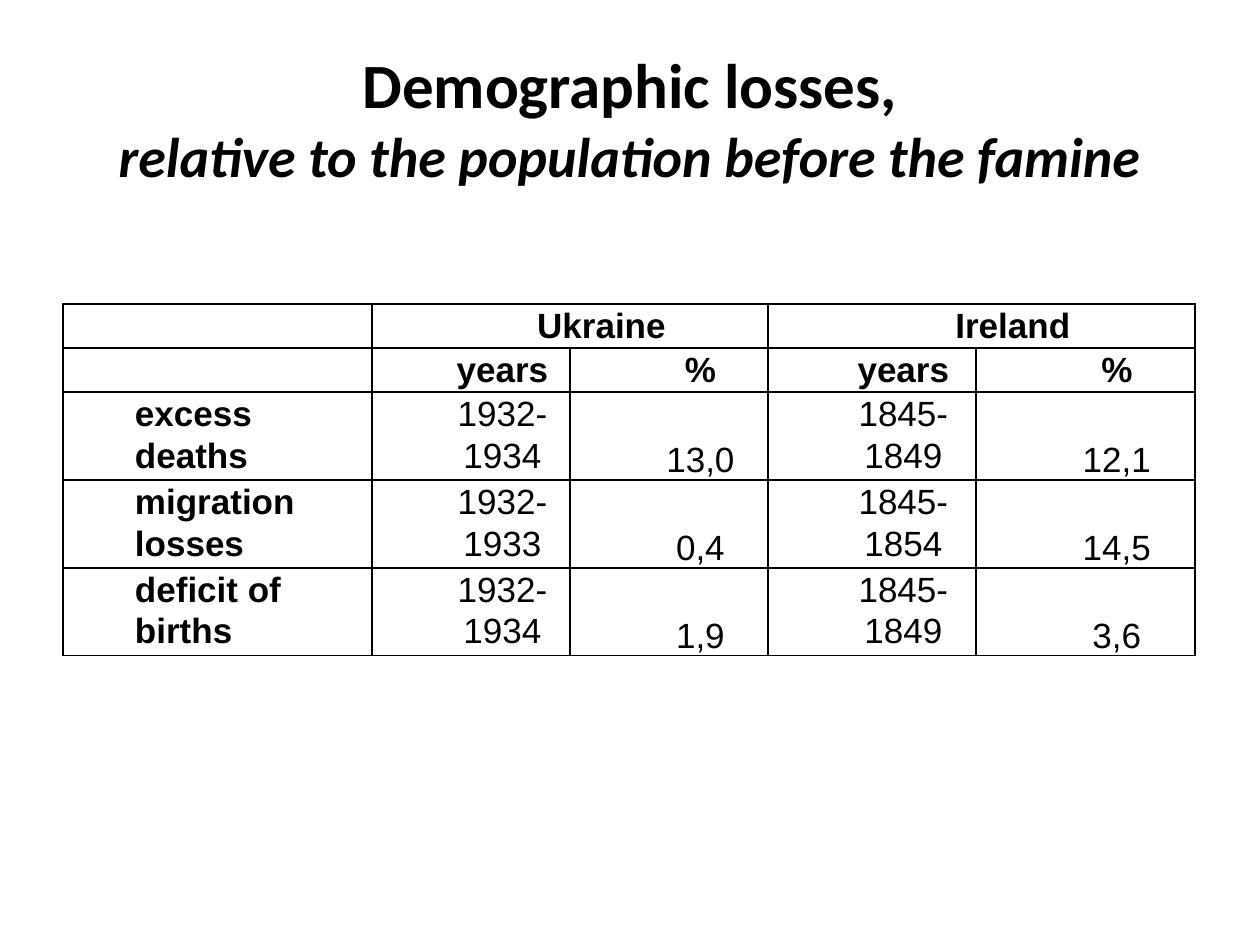
from dataclasses import dataclass

from lxml import etree
from pptx import Presentation
from pptx import util as u
from pptx.dml.color import RGBColor
from pptx.enum import text

PX = 914400 // 126  # EMU in one px


def px(n: int) -> u.Emu:
    return u.Emu(n * PX)


@dataclass(frozen=True)
class Theme:
    ink: str = "000000"
    head: str = "Calibri"
    body: str = "Arial"
    main: int = 36
    sub: int = 32
    cell: int = 20
    rule: int = 1
    lead: float = 1.07


@dataclass(frozen=True)
class Loss:
    name: str
    ua_years: str
    ua_rate: str
    ie_years: str
    ie_rate: str

    def row(self) -> list[str]:
        return [self.name, self.ua_years, self.ua_rate,
                self.ie_years, self.ie_rate]


THEME = Theme()
COLS = [309, 198, 198, 208, 219]
ROWS = [44, 44, 88, 88, 88]
HEADS = [["", "Ukraine", "", "Ireland", ""],
         ["", "years", "%", "years", "%"]]
LOSSES = [
    Loss("excess deaths", "1932-1934", "13,0", "1845-1849", "12,1"),
    Loss("migration losses", "1932-1933", "0,4", "1845-1854", "14,5"),
    Loss("deficit of births", "1932-1934", "1,9", "1845-1849", "3,6"),
]


def style(run, face: str, size: int, bold: bool, slant: bool = False) -> None:
    font = run.font
    font.name, font.size = face, u.Pt(size)
    font.bold, font.italic = bold, slant
    font.color.rgb = RGBColor.from_string(THEME.ink)


def rule(cell) -> None:
    """Draw a solid line on all four sides of a cell."""
    ns = "http://schemas.openxmlformats.org/drawingml/2006/main"
    props = cell._tc.get_or_add_tcPr()
    for side in ("lnL", "lnR", "lnT", "lnB"):
        line = etree.SubElement(props, f"{{{ns}}}{side}",
                                w=str(u.Pt(THEME.rule)))
        fill = etree.SubElement(line, f"{{{ns}}}solidFill")
        etree.SubElement(fill, f"{{{ns}}}srgbClr", val=THEME.ink)


def fill_cell(cell, words: str, bold: bool, align, anchor) -> None:
    rule(cell)
    cell.fill.background()
    cell.margin_left = cell.margin_right = px(9)
    cell.margin_top = cell.margin_bottom = 0
    cell.vertical_anchor = anchor
    if not words:
        return
    cell.text_frame.text = words
    para = cell.text_frame.paragraphs[0]
    para.alignment, para.line_spacing = align, THEME.lead
    props = para._p.get_or_add_pPr()
    props.set("marL", str(px(63)))
    props.set("indent", "0")
    style(para.runs[0], THEME.body, THEME.cell, bold)


def add_title(slide) -> None:
    title = slide.shapes.title
    title.left, title.top = px(63), px(38)
    title.width, title.height = px(1134), px(158)
    frame = title.text_frame
    frame.auto_size = text.MSO_AUTO_SIZE.NONE
    frame.vertical_anchor = text.MSO_ANCHOR.MIDDLE
    frame.text = ("Demographic losses,\v"
                  "relative to the population before the famine")
    para = frame.paragraphs[0]
    para.alignment = text.PP_ALIGN.CENTER
    main, sub = para.runs
    style(main, THEME.head, THEME.main, True)
    style(sub, THEME.head, THEME.sub, True, True)


def add_losses(slide) -> None:
    grid = slide.shapes.add_table(len(ROWS), len(COLS), px(63), px(304),
                                  px(sum(COLS)), px(sum(ROWS))).table
    grid.first_row = grid.horz_banding = False
    for col, wide in zip(grid.columns, COLS):
        col.width = px(wide)
    for row, high in zip(grid.rows, ROWS):
        row.height = px(high)

    # Names sit left, all else is centred; rates stand on the row's base
    for r, row in enumerate(HEADS + [loss.row() for loss in LOSSES]):
        head = r < len(HEADS)
        for c, words in enumerate(row):
            name = c == 0
            rate = not head and c in (2, 4)
            fill_cell(
                grid.cell(r, c), words, head or name,
                text.PP_ALIGN.LEFT if name else text.PP_ALIGN.CENTER,
                text.MSO_ANCHOR.BOTTOM if rate else text.MSO_ANCHOR.TOP)

    # Each country spans its years and rate
    for c in (1, 3):
        grid.cell(0, c).merge(grid.cell(0, c + 1))


def main() -> None:
    deck = Presentation()
    deck.slide_width, deck.slide_height = u.Inches(10), u.Inches(7.5)
    slide = deck.slides.add_slide(deck.slide_layouts[5])
    add_title(slide)
    add_losses(slide)
    deck.save("out.pptx")


if __name__ == "__main__":
    main()
